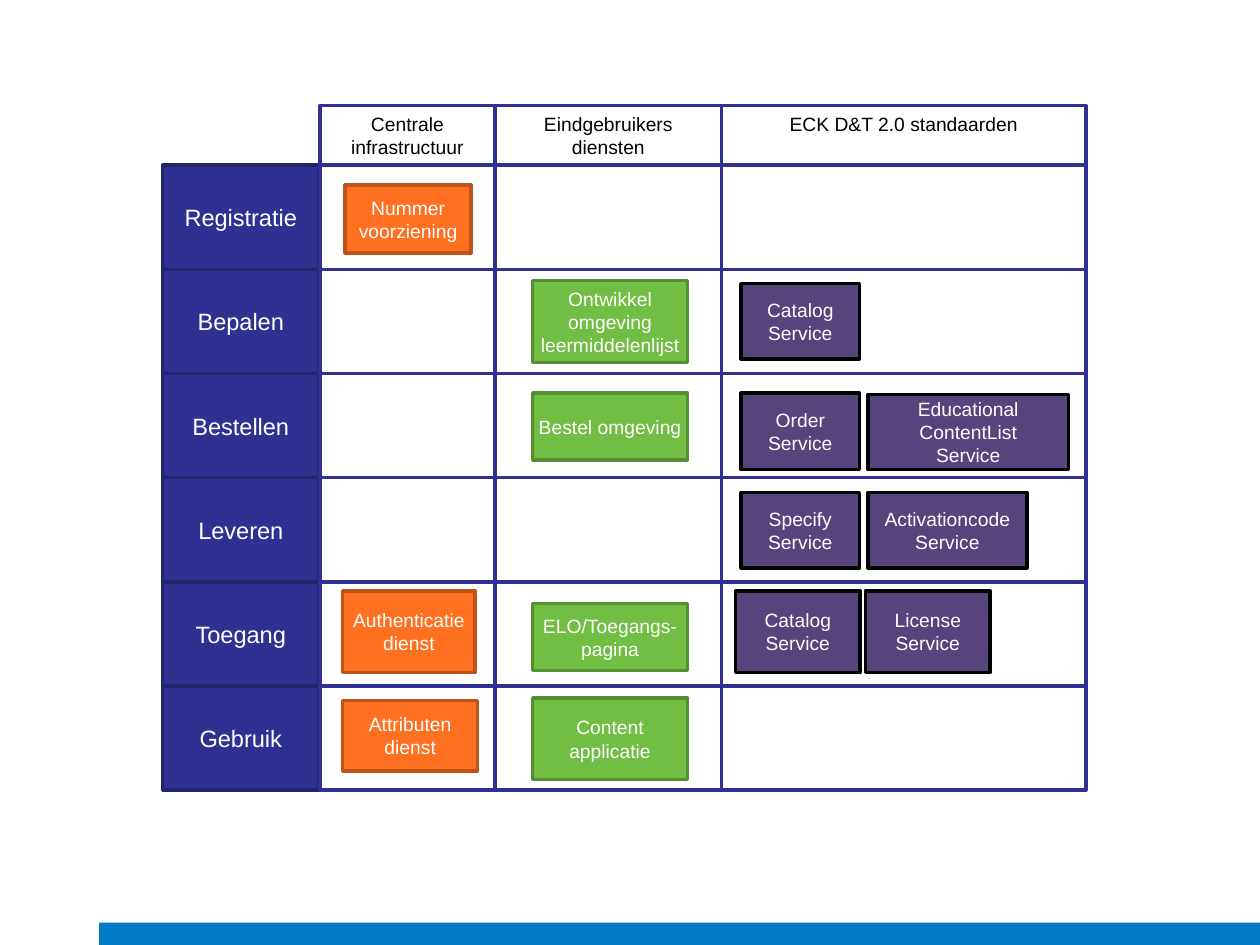
import pptx
import pptx.util
import pptx.dml.color
import pptx.enum.shapes
import pptx.enum.text

Cm = pptx.util.Cm
Pt = pptx.util.Pt

BLUE, DARK_BLUE, WHITE, BLACK = "2E3192", "22246C", "FFFFFF", "000000"
ORANGE = ("FF7021", "BD5318")
GREEN = ("72BE44", "548D32")
PURPLE = ("58447C", "000000")

GRID_LEFT, GRID_TOP, GRID_WIDTH = 3.28, 3.33, 18.6
ROW_HEIGHT, LABEL_WIDTH = 2.1, 3.15
COLUMN_LEFT, COLUMN_TOP, COLUMN_HEIGHT = 6.45, 2.13, 13.8

PHASES = ["Registratie", "Bepalen", "Bestellen", "Leveren", "Toegang", "Gebruik"]
COLUMNS = [
    ("Centrale infrastructuur", 3.53),
    ("Eindgebruikers diensten", 4.57),
    ("ECK D&T 2.0 standaarden", 7.34),
]
NORMAL, TIGHT = 0.25, 0.08
SERVICES = [
    ("Nummer voorziening", ORANGE, 6.96, 3.73, 2.54, 1.37, NORMAL),
    ("Authenticatie dienst", ORANGE, 6.91, 11.91, 2.67, 1.65, TIGHT),
    ("Attributen dienst", ORANGE, 6.91, 14.12, 2.72, 1.42, NORMAL),
    ("Ontwikkel\nomgeving leermiddelenlijst", GREEN, 10.74, 5.66, 3.12, 1.65, TIGHT),
    ("Bestel omgeving", GREEN, 10.74, 7.92, 3.12, 1.35, TIGHT),
    ("ELO/Toegangs-pagina", GREEN, 10.74, 12.17, 3.12, 1.35, TIGHT),
    ("Content applicatie", GREEN, 10.74, 14.07, 3.12, 1.65, NORMAL),
    ("Catalog\nService", PURPLE, 14.94, 5.72, 2.39, 1.52, NORMAL),
    ("Order Service", PURPLE, 14.94, 7.92, 2.39, 1.55, NORMAL),
    ("Educational\nContentList\nService", PURPLE, 17.5, 7.95, 4.04, 1.52, TIGHT),
    ("Specify\nService", PURPLE, 14.94, 9.93, 2.39, 1.52, NORMAL),
    ("Activationcode\nService", PURPLE, 17.5, 9.93, 3.2, 1.52, NORMAL),
    ("Catalog\nService", PURPLE, 14.83, 11.91, 2.51, 1.65, NORMAL),
    ("License Service", PURPLE, 17.45, 11.91, 2.51, 1.65, NORMAL),
]


def rgb(value):
    return pptx.dml.color.RGBColor.from_string(value)


def add_box(s, left, top, width, height, fill=None, line=None):
    sp = s.shapes.add_shape(
        pptx.enum.shapes.MSO_SHAPE.RECTANGLE,
        Cm(left), Cm(top), Cm(width), Cm(height),
    )
    sp.shadow.inherit = False
    if fill:
        sp.fill.solid()
        sp.fill.fore_color.rgb = rgb(fill)
    else:
        sp.fill.background()
    if line:
        sp.line.color.rgb = rgb(line)
        sp.line.width = Pt(2)
    else:
        sp.line.fill.background()
    return sp


def set_text(sp, text, size=11, color=WHITE, anchor="MIDDLE", inset=NORMAL):
    tf = sp.text_frame
    tf.word_wrap = True
    tf.vertical_anchor = pptx.enum.text.MSO_ANCHOR[anchor]
    tf.margin_left = tf.margin_right = Cm(inset)
    tf.margin_top = tf.margin_bottom = Cm(0.13)
    for i, content in enumerate(text.split("\n")):
        p = tf.add_paragraph() if i else tf.paragraphs[0]
        p.alignment = pptx.enum.text.PP_ALIGN.CENTER
        r = p.add_run()
        r.text = content
        r.font.name = "Arial"
        r.font.size = Pt(size)
        r.font.color.rgb = rgb(color)


def add_phases(s):
    tops = [GRID_TOP + i * ROW_HEIGHT for i in range(len(PHASES))]
    for top in tops:
        add_box(s, GRID_LEFT, top, GRID_WIDTH, ROW_HEIGHT, WHITE, BLUE)
    for top, phase in zip(tops, PHASES):
        sp = add_box(s, GRID_LEFT, top, LABEL_WIDTH, ROW_HEIGHT, BLUE, DARK_BLUE)
        set_text(sp, phase, size=13.5)


def add_columns(s):
    left = COLUMN_LEFT
    for title, width in COLUMNS:
        sp = add_box(s, left, COLUMN_TOP, width, COLUMN_HEIGHT, line=BLUE)
        set_text(sp, title, color=BLACK, anchor="TOP")
        left += width


def add_services(s):
    for text, (fill, line), left, top, width, height, inset in SERVICES:
        sp = add_box(s, left, top, width, height, fill, line)
        set_text(sp, text, inset=inset)


def main():
    prs = pptx.Presentation()
    prs.slide_width, prs.slide_height = Cm(25.4), Cm(19.05)
    s = prs.slides.add_slide(prs.slide_layouts[6])
    add_box(s, 2, 18.6, 23.4, 0.45, "007AC3")
    add_phases(s)
    add_columns(s)
    add_services(s)
    prs.save("out.pptx")


if __name__ == "__main__":
    main()
